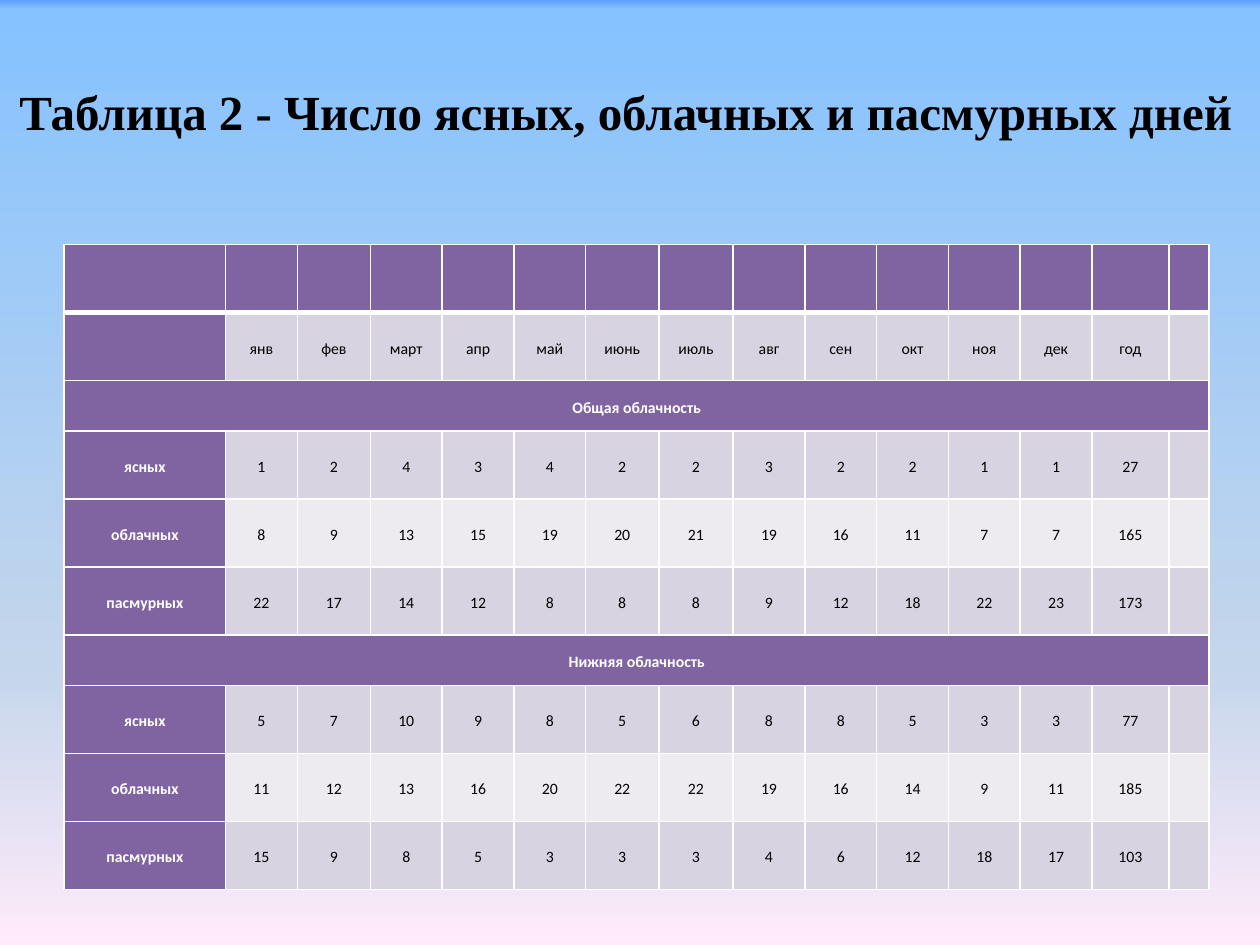
from dataclasses import dataclass

from lxml.etree import SubElement
from pptx import Presentation
from pptx.dml.color import RGBColor
from pptx.enum.text import MSO_ANCHOR as Anchor, PP_ALIGN as Align
from pptx.oxml import parse_xml
from pptx.oxml.ns import nsdecls, qn
from pptx.util import Inches, Pt


@dataclass(frozen=True)
class Theme:
    ink: str = "000000"
    white: str = "FFFFFF"
    purple: str = "8064A2"
    band_dark: str = "D8D3E0"
    band_light: str = "EDEAF0"
    sky: tuple = ((0, "5E9EFF"), (1, "85C2FF"), (70, "C4D6EB"), (100, "FFEBFA"))
    title_font: str = "Times New Roman"
    table_font: str = "Calibri"
    title_size: int = 28
    table_size: int = 9
    line_pitch: float = 13.5
    rule: int = 1
    header_rule: int = 3


THEME = Theme()

MONTHS = "янв фев март апр май июнь июль авг сен окт ноя дек год".split()
SECTIONS = {
    "Общая облачность": {
        "ясных": (1, 2, 4, 3, 4, 2, 2, 3, 2, 2, 1, 1, 27),
        "облачных": (8, 9, 13, 15, 19, 20, 21, 19, 16, 11, 7, 7, 165),
        "пасмурных": (22, 17, 14, 12, 8, 8, 8, 9, 12, 18, 22, 23, 173),
    },
    "Нижняя облачность": {
        "ясных": (5, 7, 10, 9, 8, 5, 6, 8, 8, 5, 3, 3, 77),
        "облачных": (11, 12, 13, 16, 20, 22, 22, 19, 16, 14, 9, 11, 185),
        "пасмурных": (15, 9, 8, 5, 3, 3, 3, 4, 6, 12, 18, 17, 103),
    },
}
COLUMN_WIDTHS = (1.28, 0.57, 0.58, 0.57, 0.57, 0.57, 0.58, 0.59,
                 0.57, 0.57, 0.57, 0.57, 0.57, 0.61, 0.32)
ROW_HEIGHT, SECTION_HEIGHT = 0.54, 0.4
CELL_INSET = 0.03


def write(frame, text, *, font, size, color, bold=False, pitch=None):
    para = frame.paragraphs[0]
    para.alignment = Align.CENTER
    if pitch:
        para.line_spacing = Pt(pitch)
    span = para.add_run()
    span.text = text
    span.font.name = font
    span.font.size = Pt(size)
    span.font.bold = bold
    span.font.color.rgb = RGBColor.from_string(color)


def paint_background(slide):
    fill = slide.background.fill
    fill.gradient()
    fill.gradient_angle = 270  # counter-clockwise, so top to bottom
    stops = slide.element.xpath(".//a:gsLst")[0]
    for stop in list(stops):
        stops.remove(stop)
    for percent, color in THEME.sky:
        stop = SubElement(stops, qn("a:gs"), pos=str(percent * 1000))
        SubElement(stop, qn("a:srgbClr"), val=color)


def add_title(slide, left, top, width, height):
    box = slide.shapes.add_textbox(Inches(left), Inches(top), Inches(width), Inches(height))
    frame = box.text_frame
    frame.word_wrap = False
    frame.vertical_anchor = Anchor.TOP
    write(frame, "Таблица 2 - Число ясных, облачных и пасмурных дней",
          font=THEME.title_font, size=THEME.title_size, color=THEME.ink, bold=True)


def set_borders(cell, top, bottom):
    properties = cell._tc.get_or_add_tcPr()
    sides = {"L": THEME.rule, "R": THEME.rule, "T": top, "B": bottom}
    for index, (side, width) in enumerate(sides.items()):
        properties.insert(index, parse_xml(
            f'<a:ln{side} {nsdecls("a")} w="{Pt(width)}"><a:solidFill>'
            f'<a:srgbClr val="{THEME.white}"/></a:solidFill></a:ln{side}>'))


def style_cell(cell, text, fill, *, heading=False, inset=CELL_INSET,
               top=THEME.rule, bottom=THEME.rule):
    cell.fill.solid()
    cell.fill.fore_color.rgb = RGBColor.from_string(fill)
    set_borders(cell, top, bottom)
    cell.vertical_anchor = Anchor.MIDDLE
    cell.margin_left = cell.margin_right = Inches(inset)
    cell.margin_top = cell.margin_bottom = Inches(inset)
    if text:
        write(cell.text_frame, text, font=THEME.table_font, size=THEME.table_size,
              color=THEME.white if heading else THEME.ink, bold=heading,
              pitch=THEME.line_pitch)


def table_rows():
    """Return (texts, body fill, is section) for each row."""
    blank = [""] * len(COLUMN_WIDTHS)
    rows = [(blank, THEME.purple, False),
            (["", *MONTHS, ""], THEME.band_dark, False)]
    for section, measures in SECTIONS.items():
        rows.append(([section, *blank[1:]], THEME.purple, True))
        for index, (label, values) in enumerate(measures.items()):
            band = THEME.band_light if index % 2 else THEME.band_dark
            rows.append(([label, *map(str, values), ""], band, False))
    return rows


def add_cloud_table(slide, left, top, width, height):
    rows = table_rows()
    table = slide.shapes.add_table(
        len(rows), len(COLUMN_WIDTHS),
        Inches(left), Inches(top), Inches(width), Inches(height)).table
    table.first_row = table.horz_banding = False
    for column, column_width in zip(table.columns, COLUMN_WIDTHS):
        column.width = Inches(column_width)

    year_column = len(MONTHS)
    for r, (texts, fill, is_section) in enumerate(rows):
        table.rows[r].height = Inches(SECTION_HEIGHT if is_section else ROW_HEIGHT)
        for c, text in enumerate(texts):
            flush = is_section or (c == year_column and r > 1)
            style_cell(table.cell(r, c), text, THEME.purple if c == 0 else fill,
                       heading=c == 0, inset=0 if flush else CELL_INSET,
                       top=THEME.header_rule if r == 1 else THEME.rule,
                       bottom=THEME.header_rule if r == 0 else THEME.rule)
        if is_section:
            table.cell(r, 0).merge(table.cell(r, len(texts) - 1))


def main():
    deck = Presentation()
    deck.slide_width, deck.slide_height = Inches(10), Inches(7.5)
    page = deck.slides.add_slide(deck.slide_layouts[6])
    paint_background(page)
    add_cloud_table(page, 0.51, 1.94, 9.06, 5.12)
    add_title(page, 0, 0.6, 9.93, 0.88)
    deck.save("out.pptx")


if __name__ == "__main__":
    main()
